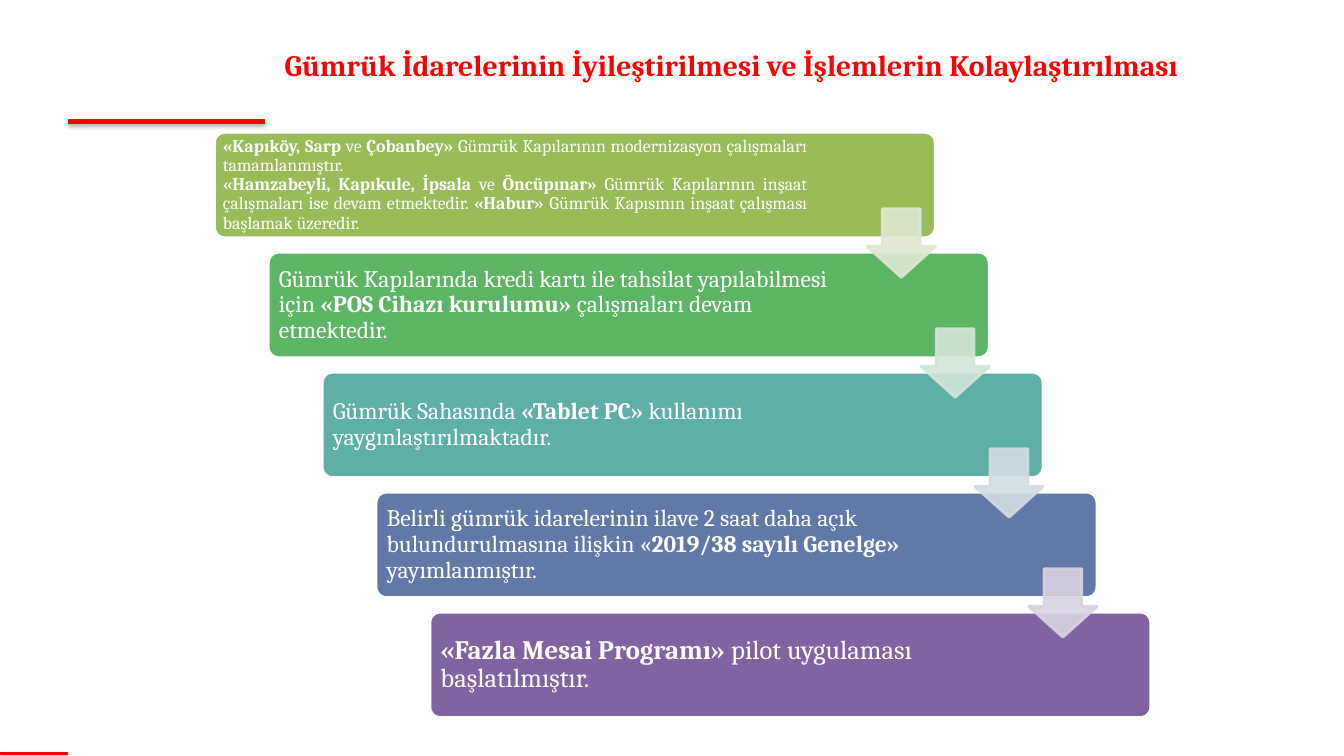
from lxml import etree
from pptx import Presentation
from pptx.dml.color import RGBColor
from pptx.enum.shapes import MSO_CONNECTOR, MSO_SHAPE
from pptx.enum.text import MSO_ANCHOR, MSO_AUTO_SIZE, PP_ALIGN
from pptx.oxml.ns import qn
from pptx.util import Inches, Pt

ROUND, ARROW = MSO_SHAPE.ROUNDED_RECTANGLE, MSO_SHAPE.DOWN_ARROW
LINE = MSO_CONNECTOR.STRAIGHT
TOP, MIDDLE = MSO_ANCHOR.TOP, MSO_ANCHOR.MIDDLE
LEFT, CENTER, JUSTIFY = PP_ALIGN.LEFT, PP_ALIGN.CENTER, PP_ALIGN.JUSTIFY
FIXED = MSO_AUTO_SIZE.NONE
FONT, RED, WHITE = "Cambria", "FF0000", "FFFFFF"

TITLE = "*Gümrük İdarelerinin İyileştirilmesi ve İşlemlerin Kolaylaştırılması*"
STEPS = [
    ("9BBB59", 12, JUSTIFY, 5.58, 0.05, [
        "*«Kapıköy, Sarp *ve *Çobanbey»* Gümrük Kapılarının modernizasyon "
        "çalışmaları tamamlanmıştır.",
        "*«Hamzabeyli, Kapıkule, İpsala *ve *Öncüpınar» *Gümrük Kapılarının "
        "inşaat çalışmaları ise devam etmektedir. *«Habur»* Gümrük Kapısının "
        "inşaat çalışması başlamak üzeredir."]),
    ("5CB565", 16, LEFT, 5.56, 0.07, [
        "Gümrük Kapılarında kredi kartı ile tahsilat yapılabilmesi için "
        "*«POS Cihazı kurulumu» *çalışmaları devam etmektedir."]),
    ("5EAFA6", 16, LEFT, 5.56, 0.07, [
        "Gümrük Sahasında *«Tablet PC» *kullanımı yaygınlaştırılmaktadır."]),
    ("6179A8", 16, LEFT, 5.56, 0.07, [
        "Belirli gümrük idarelerinin ilave 2 saat daha açık bulundurulmasına "
        "ilişkin «*2019/38 sayılı Genelge» *yayımlanmıştır."]),
    ("8064A2", 18, LEFT, 5.56, 0.07, [
        "*«Fazla Mesai Programı» *pilot uygulaması başlatılmıştır."]),
]
ARROWS = ["DEE7D1", "D2E5D9", "D2DCE2", "D8D3E0"]
RULES = [(0.64, 2.48, 1.14, 3, 35, 1.8), (0, 0.64, 7.07, 2, 38, 1.6)]
BOX_X, BOX_Y, BOX_W, BOX_H = 2.01, 1.24, 6.76, 0.99
STEP_X, STEP_Y, PAD = 0.505, 1.125, 0.03
ARROW_X, ARROW_Y, ARROW_S = 8.13, 1.96, 0.64


def color(code):
    return RGBColor.from_string(code)


def style(item, values):
    for name, value in values.items():
        setattr(item, name, value)


def write(frame, lines, size, tint, para, body):
    style(frame, {"word_wrap": True, "auto_size": FIXED, **body})
    for i, line in enumerate(lines):
        p = frame.paragraphs[0] if i == 0 else frame.add_paragraph()
        style(p, para)
        for j, part in enumerate(line.split("*")):
            if part:
                run = p.add_run()
                run.text = part
                style(run.font, {"name": FONT, "size": Pt(size), "bold": j % 2 == 1})
                run.font.color.rgb = color(tint)


def draw(kind, x, y, w, h, fill, edge, adjust):
    shape = slide.shapes.add_shape(kind, Inches(x), Inches(y), Inches(w), Inches(h))
    shape.shadow.inherit = False
    shape.fill.solid()
    shape.fill.fore_color.rgb = color(fill)
    shape.line.color.rgb = color(edge)
    shape.line.width = Pt(2)
    for i, value in enumerate(adjust):
        shape.adjustments[i] = value
    return shape


def rule(x1, x2, y, width, alpha, dist):
    line = slide.shapes.add_connector(LINE, Inches(x1), Inches(y), Inches(x2), Inches(y))
    line.line.color.rgb = color(RED)
    line.line.width = Pt(width)
    effects = etree.SubElement(line._element.spPr, qn("a:effectLst"))
    shadow = etree.SubElement(effects, qn("a:outerShdw"), blurRad=str(Pt(3.1)),
                              dist=str(Pt(dist)), dir="5400000", rotWithShape="0")
    tint = etree.SubElement(shadow, qn("a:srgbClr"), val="000000")
    etree.SubElement(tint, qn("a:alpha"), val=str(alpha * 1000))


deck = Presentation()
style(deck, {"slide_width": Inches(12.6), "slide_height": Inches(7.09)})
slide = deck.slides.add_slide(deck.slide_layouts[5])

title = slide.shapes.title
style(title, {"left": Inches(0.56), "top": Inches(0.39),
              "width": Inches(12.6), "height": Inches(0.54)})
write(title.text_frame, [TITLE], 20, RED, {"alignment": CENTER},
      {"vertical_anchor": TOP})

for values in RULES:
    rule(*values)

for i, (fill, size, align, width, inset, lines) in enumerate(STEPS):
    x, y = BOX_X + i * STEP_X, BOX_Y + i * STEP_Y
    draw(ROUND, x, y, BOX_W, BOX_H, fill, WHITE, [0.1])
    box = slide.shapes.add_textbox(Inches(x + PAD), Inches(y + PAD),
                                   Inches(width), Inches(BOX_H - 2 * PAD))
    sides = ("margin_left", "margin_top", "margin_right", "margin_bottom")
    write(box.text_frame, lines, size, WHITE,
          {"alignment": align, "line_spacing": 0.9},
          {"vertical_anchor": MIDDLE, **dict.fromkeys(sides, Inches(inset))})

for i, tint in enumerate(ARROWS):
    arrow = draw(ARROW, ARROW_X + i * STEP_X, ARROW_Y + i * STEP_Y,
                 ARROW_S, ARROW_S, tint, tint, [0.55, 0.45])
    for node in arrow._element.spPr.iter(qn("a:srgbClr")):
        etree.SubElement(node, qn("a:alpha"), val="90000")

deck.save("out.pptx")
